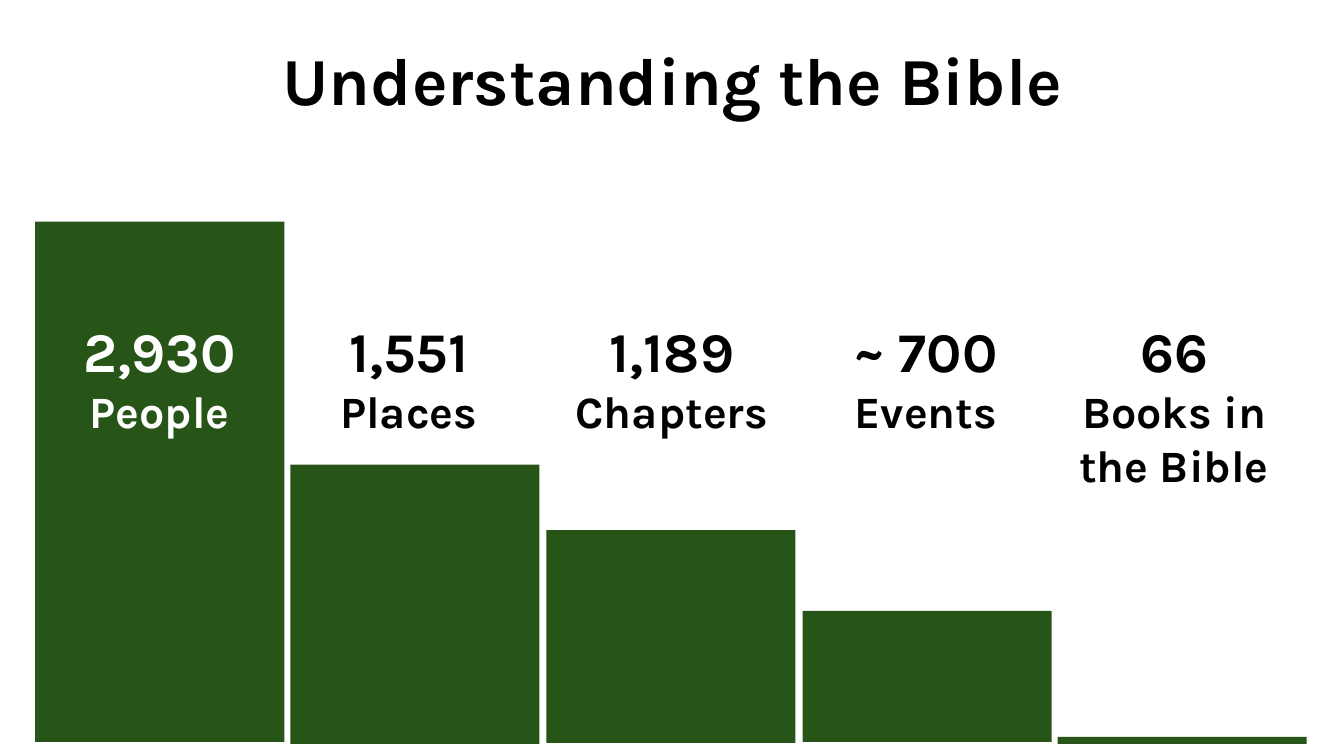
"""Build a slide that compares five counts from the Bible as descending bars."""
from dataclasses import dataclass

from pptx import Presentation
from pptx.dml.color import RGBColor
from pptx.enum.shapes import MSO_SHAPE
from pptx.enum.text import MSO_AUTO_SIZE, PP_ALIGN
from pptx.slide import Slide
from pptx.util import Emu, Pt

RECTANGLE = MSO_SHAPE.RECTANGLE
CENTER = PP_ALIGN.CENTER
FIT_SHAPE = MSO_AUTO_SIZE.SHAPE_TO_FIT_TEXT
BLANK_LAYOUT = 6
EMU_PER_PX = 9144

SLIDE_WIDTH, SLIDE_HEIGHT = 1333, 750
COLUMN_WIDTH = 247
FIRST_BAR_LEFT = 35
BAR_PITCH = 253.5
LABEL_TOP = 309


@dataclass(frozen=True)
class Theme:
    font: str = "Karla"
    bar: RGBColor = RGBColor(0x27, 0x54, 0x17)
    dark: RGBColor = RGBColor(0, 0, 0)
    light: RGBColor = RGBColor(255, 255, 255)
    title_size: int = 48
    count_size: int = 40
    name_size: int = 32


THEME = Theme()


@dataclass(frozen=True)
class Box:
    left: int
    top: int
    width: int
    height: int

    def emu(self) -> tuple[Emu, ...]:
        edges = (self.left, self.top, self.width, self.height)
        return tuple(Emu(edge * EMU_PER_PX) for edge in edges)


@dataclass(frozen=True)
class Line:
    text: str
    size: int


@dataclass(frozen=True)
class Column:
    count: str
    name: str
    bar_top: int
    bar_height: int
    label_left: int
    label_height: int = 131
    color: RGBColor = THEME.dark


COLUMNS = (
    Column("2,930", "People", 220, 516, 35, color=THEME.light),
    Column("1,551", "Places", 461, 277, 282),
    Column("1,189", "Chapters", 526, 211, 543),
    Column("~ 700", "Events", 606, 130, 795),
    Column("66", "Books in the Bible", 731, 7, 1041, label_height=185),
)


def add_bar(slide: Slide, box: Box) -> None:
    bar = slide.shapes.add_shape(RECTANGLE, *box.emu())
    bar.shadow.inherit = False
    bar.fill.solid()
    bar.fill.fore_color.rgb = THEME.bar
    bar.line.fill.background()


def add_text(slide: Slide, box: Box, lines: list[Line], color: RGBColor) -> None:
    frame = slide.shapes.add_textbox(*box.emu()).text_frame
    frame.word_wrap = True
    frame.auto_size = FIT_SHAPE
    frame.text = "\n".join(line.text for line in lines)
    for paragraph, line in zip(frame.paragraphs, lines):
        paragraph.alignment = CENTER
        paragraph.font.name = THEME.font
        paragraph.font.size = Pt(line.size)
        paragraph.font.bold = True
        paragraph.font.color.rgb = color


def main() -> None:
    presentation = Presentation()
    presentation.slide_width = Emu(SLIDE_WIDTH * EMU_PER_PX)
    presentation.slide_height = Emu(SLIDE_HEIGHT * EMU_PER_PX)
    slide = presentation.slides.add_slide(presentation.slide_layouts[BLANK_LAYOUT])

    for index, column in enumerate(COLUMNS):
        bar_left = round(FIRST_BAR_LEFT + index * BAR_PITCH)
        add_bar(slide, Box(bar_left, column.bar_top, COLUMN_WIDTH, column.bar_height))
    for column in COLUMNS:
        label = Box(column.label_left, LABEL_TOP, COLUMN_WIDTH, column.label_height)
        lines = [Line(column.count, THEME.count_size), Line(column.name, THEME.name_size)]
        add_text(slide, label, lines, column.color)

    title = Line("Understanding the Bible", THEME.title_size)
    add_text(slide, Box(113, 33, 1108, 91), [title], THEME.dark)
    presentation.save("out.pptx")


if __name__ == "__main__":
    main()
